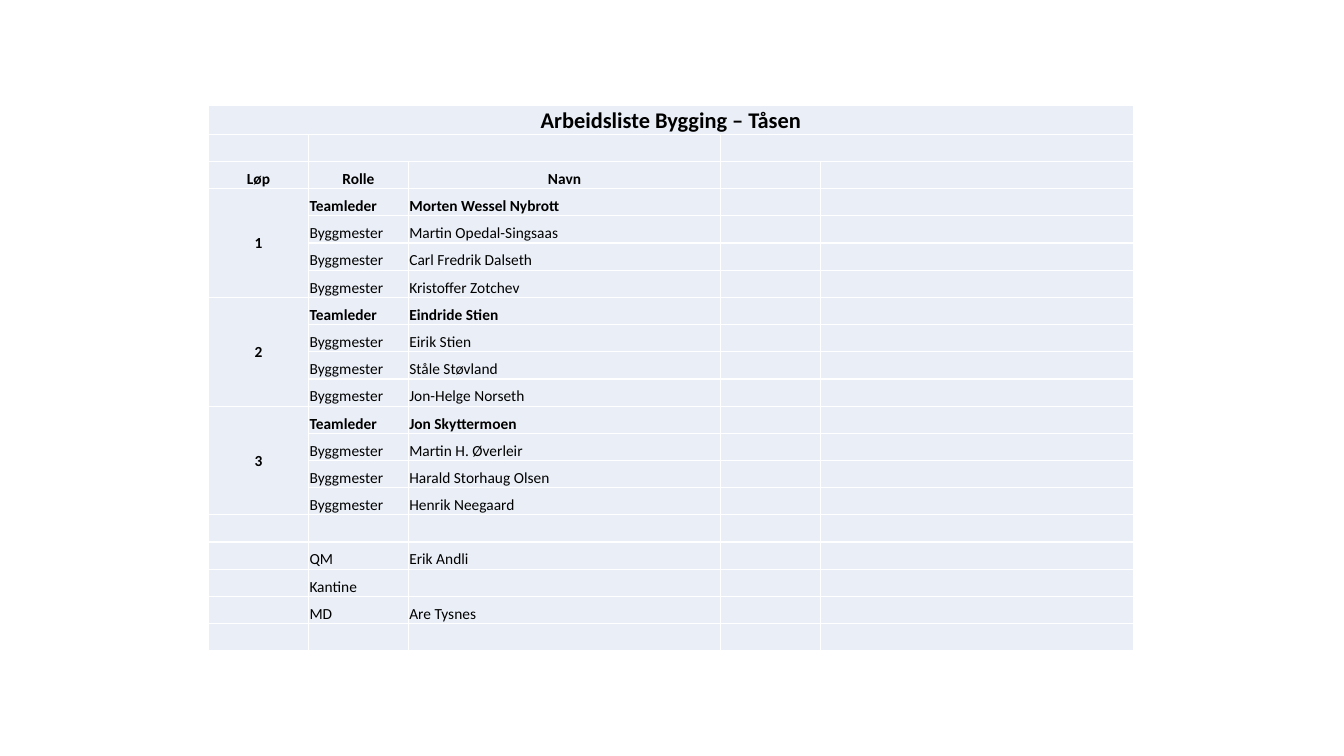
from dataclasses import dataclass

from lxml.etree import SubElement
from pptx import Presentation
from pptx.dml.color import RGBColor
from pptx.enum.text import MSO_ANCHOR, PP_ALIGN
from pptx.oxml.ns import qn
from pptx.util import Inches, Pt


@dataclass(frozen=True)
class Theme:
    """Colours, font and sizes of the work list."""

    font: str = "Calibri"
    text: str = "000000"
    fill: str = "EAEFF7"
    border: str = "FFFFFF"
    title_size: int = 16
    body_size: int = 11
    border_width: int = 1


THEME = Theme()
TITLE = "Arbeidsliste Bygging – Tåsen"
HEADINGS = ["Løp", "Rolle", "Navn"]
TEAMS = [
    ["Morten Wessel Nybrott", "Martin Opedal-Singsaas", "Carl Fredrik Dalseth", "Kristoffer Zotchev"],
    ["Eindride Stien", "Eirik Stien", "Ståle Støvland", "Jon-Helge Norseth"],
    ["Jon Skyttermoen", "Martin H. Øverleir", "Harald Storhaug Olsen", "Henrik Neegaard"],
]
SUPPORT = [("QM", "Erik Andli"), ("Kantine", ""), ("MD", "Are Tysnes")]
COLUMN_WIDTHS = [0.99, 0.99, 3.1, 0.99, 3.1]
ROW_COUNT = 20
ROW_HEIGHT = 0.27
FIRST_TEAM_ROW = 3
TEAM_SIZE = 4
FIRST_SUPPORT_ROW = FIRST_TEAM_ROW + TEAM_SIZE * len(TEAMS) + 1


def set_format(target, values):
    """Set each named attribute on the target."""
    for name, value in values.items():
        setattr(target, name, value)


def add_borders(cell):
    """Draw a solid line on all four sides of a cell."""
    properties = cell._tc.get_or_add_tcPr()
    for position, side in enumerate(["lnL", "lnR", "lnT", "lnB"]):
        line = SubElement(properties, qn(f"a:{side}"), w=str(Pt(THEME.border_width)))
        solid = SubElement(line, qn("a:solidFill"))
        SubElement(solid, qn("a:srgbClr"), val=THEME.border)
        properties.insert(position, line)


def style_cell(cell):
    """Give a cell its fill, borders, margins and empty-line size."""
    cell.fill.solid()
    cell.fill.fore_color.rgb = RGBColor.from_string(THEME.fill)
    add_borders(cell)
    set_format(cell, {
        "margin_left": Inches(0.01),
        "margin_right": Inches(0.01),
        "margin_top": Inches(0.01),
        "margin_bottom": 0,
        "vertical_anchor": MSO_ANCHOR.BOTTOM,
    })
    para = cell.text_frame.paragraphs[0]
    SubElement(para._p, qn("a:endParaRPr"), sz=str(THEME.body_size * 100))


def write_cell(cell, text, bold=False, align=PP_ALIGN.LEFT, size=THEME.body_size):
    """Write one formatted line in a cell."""
    para = cell.text_frame.paragraphs[0]
    para.alignment = align
    span = para.add_run()
    span.text = text
    set_format(span.font, {"name": THEME.font, "size": Pt(size), "bold": bold})
    span.font.color.rgb = RGBColor.from_string(THEME.text)


def add_grid(page):
    """Add the empty styled table to the page."""
    frame = page.shapes.add_table(
        ROW_COUNT, len(COLUMN_WIDTHS), Inches(2.07), Inches(1.05),
        Inches(sum(COLUMN_WIDTHS)), Inches(ROW_COUNT * ROW_HEIGHT),
    )
    table = frame.table
    set_format(table, {"first_row": False, "horz_banding": False})
    for column, width in zip(table.columns, COLUMN_WIDTHS):
        column.width = Inches(width)
    for row in table.rows:
        row.height = Inches(ROW_HEIGHT)
    for cell in table.iter_cells():
        style_cell(cell)
    return table


def fill_header(table):
    """Write the title and the column headings."""
    table.cell(0, 0).merge(table.cell(0, 4))
    write_cell(table.cell(0, 0), TITLE, True, PP_ALIGN.CENTER, THEME.title_size)
    for column in (1, 3):
        table.cell(1, column).merge(table.cell(1, column + 1))
    for column, heading in enumerate(HEADINGS):
        write_cell(table.cell(2, column), heading, True, PP_ALIGN.CENTER)


def fill_team(table, number, names):
    """Write one team: its number, its leader and its builders."""
    top = FIRST_TEAM_ROW + (number - 1) * TEAM_SIZE
    number_cell = table.cell(top, 0)
    number_cell.merge(table.cell(top + TEAM_SIZE - 1, 0))
    number_cell.vertical_anchor = MSO_ANCHOR.MIDDLE
    write_cell(number_cell, str(number), True, PP_ALIGN.CENTER)
    for offset, name in enumerate(names):
        leader = offset == 0
        write_cell(table.cell(top + offset, 1), "Teamleder" if leader else "Byggmester", leader)
        write_cell(table.cell(top + offset, 2), name, leader)


def fill_support(table):
    """Write the support roles below the teams."""
    for row, (role, name) in enumerate(SUPPORT, FIRST_SUPPORT_ROW):
        write_cell(table.cell(row, 1), role)
        if name:
            write_cell(table.cell(row, 2), name)


def main():
    """Build and save the work list slide."""
    deck = Presentation()
    set_format(deck, {"slide_width": Inches(13.33), "slide_height": Inches(7.5)})
    page = deck.slides.add_slide(deck.slide_layouts[6])
    table = add_grid(page)
    fill_header(table)
    for number, names in enumerate(TEAMS, 1):
        fill_team(table, number, names)
    fill_support(table)
    deck.save("out.pptx")


if __name__ == "__main__":
    main()
